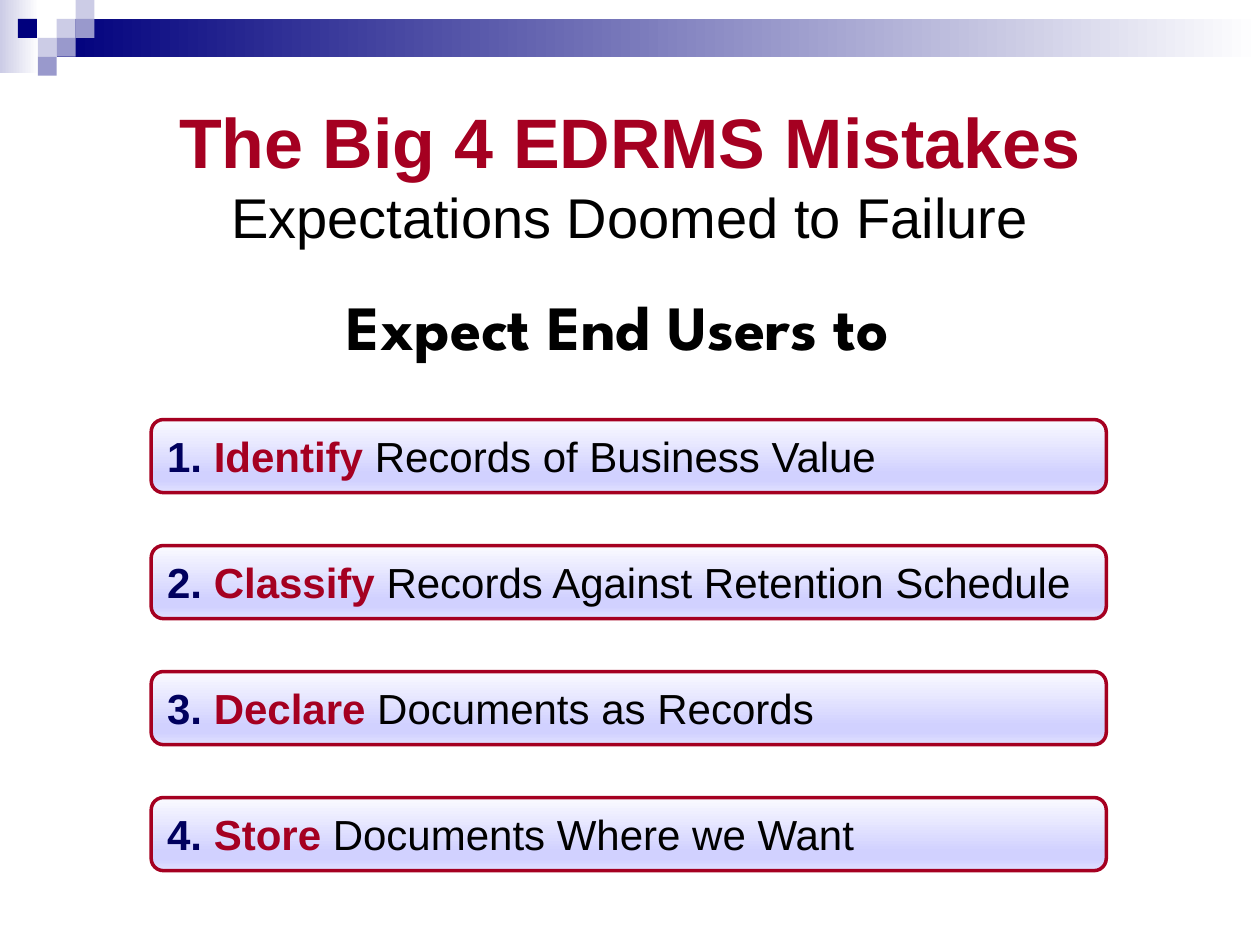
from lxml.etree import SubElement
from pptx import Presentation
from pptx.dml.color import RGBColor
from pptx.enum.shapes import MSO_SHAPE
from pptx.enum.text import MSO_ANCHOR, PP_ALIGN
from pptx.oxml.ns import qn
from pptx.util import Inches, Pt

hue = RGBColor.from_string
NAVY, PALE, MID, RED, INK = "00007D", "CCCCE6", "9999CC", "A50021", "000000"

deck = Presentation()
deck.slide_width, deck.slide_height = Inches(10), Inches(7.5)
slide = deck.slides.add_slide(deck.slide_layouts[6])


def block(kind, place, stops, angle=0):
    shape = slide.shapes.add_shape(kind, *map(Inches, place))
    shape.shadow.inherit = False
    shape.line.fill.background()
    if len(stops) == 1:
        shape.fill.solid()
        shape.fill.fore_color.rgb = hue(stops[0][1])
        return shape
    shape.fill.gradient()
    shape.fill.gradient_angle = angle
    ramp = shape._element.spPr.find(qn("a:gradFill")).find(qn("a:gsLst"))
    for old in list(ramp):
        ramp.remove(old)
    for share, tint in stops:
        stop = SubElement(ramp, qn("a:gs"), pos=str(share * 1000))
        SubElement(stop, qn("a:srgbClr"), val=tint)
    return shape


def write(para, text, size=24, color=INK, bold=False, font="Arial"):
    run = para.add_run()
    run.text = text
    run.font.size, run.font.name, run.font.bold = Pt(size), font, bold
    run.font.color.rgb = hue(color)


RECT = MSO_SHAPE.RECTANGLE
block(RECT, (0, 0, 0.31, 0.58), [(0, PALE), (100, "FFFFFF")])
block(RECT, (0.45, 0.15, 9.55, 0.3), [(0, NAVY), (100, "FFFFFF")])

cell = 0.15
tiles = [(3, 1, PALE), (4, 0, PALE), (4, 1, MID), (2, 2, PALE),
         (0.95, 1, NAVY), (3, 2, MID), (2, 3, MID)]
for col, row, tint in tiles:
    block(RECT, (col * cell, row * cell, cell, cell), [(0, tint)])

title = slide.shapes.add_textbox(*map(Inches, (0.5, 0.59, 9, 1.58))).text_frame
title.word_wrap = True
title.vertical_anchor = MSO_ANCHOR.MIDDLE
para = title.paragraphs[0]
para.alignment = PP_ALIGN.CENTER
write(para, "The Big 4 EDRMS Mistakes", size=40, color=RED, bold=True)
para.add_line_break()
write(para, "Expectations Doomed to Failure", size=32)

lead = slide.shapes.add_textbox(*map(Inches, (2.33, 2.23, 5.15, 0.71))).text_frame
lead.word_wrap = False
para = lead.paragraphs[0]
para.alignment = PP_ALIGN.CENTER
write(para, "Expect End Users to", size=36, bold=True, font="League Spartan")

glow = [(0, "FAFAFF"), (74, "D1D1FF"), (83, "D1D1FF"), (100, "E0E0FF")]
tasks = [("Identify", "Records of Business Value"),
         ("Classify", "Records Against Retention Schedule"),
         ("Declare", "Documents as Records"),
         ("Store", "Documents Where we Want")]
for row, (verb, rest) in enumerate(tasks):
    bar = block(MSO_SHAPE.ROUNDED_RECTANGLE, (1.2, 3.33 + row, 7.58, 0.58), glow, 270)
    bar.line.color.rgb = hue(RED)
    bar.line.width = Pt(2)
    bar.text_frame.vertical_anchor = MSO_ANCHOR.MIDDLE
    para = bar.text_frame.paragraphs[0]
    para.alignment = PP_ALIGN.LEFT
    write(para, f"{row + 1}. ", color="00005E", bold=True)
    write(para, verb, color=RED, bold=True)
    write(para, f" {rest}")

deck.save("out.pptx")
